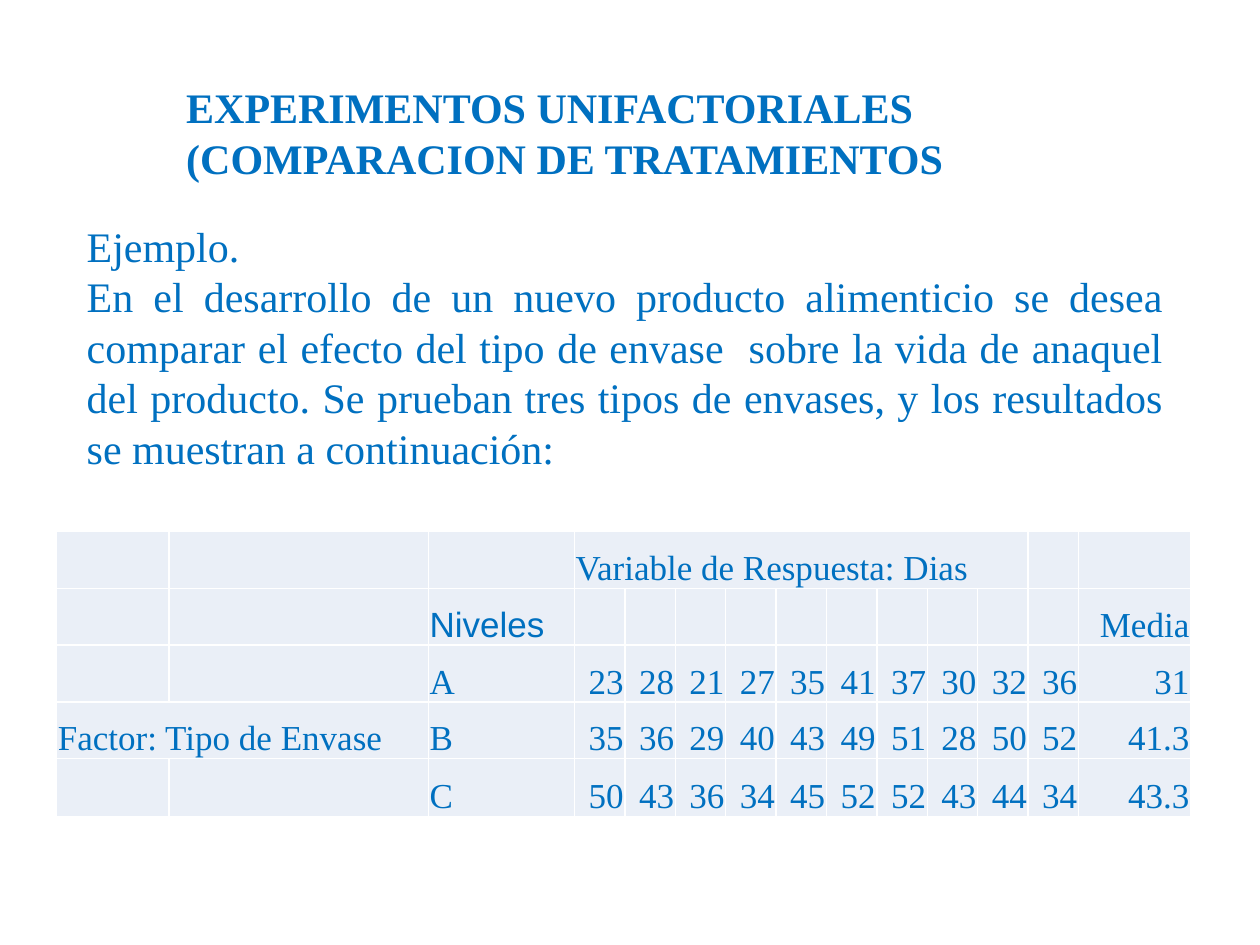
"""Build the slide on single-factor experiments with its table of results."""
from dataclasses import dataclass

from lxml import etree
from pptx import Presentation
from pptx.dml.color import RGBColor
from pptx.enum.text import MSO_ANCHOR, PP_ALIGN
from pptx.oxml.ns import qn
from pptx.util import Inches, Pt

LEFT, RIGHT, JUST = PP_ALIGN.LEFT, PP_ALIGN.RIGHT, PP_ALIGN.JUSTIFY
BOTTOM = MSO_ANCHOR.BOTTOM
HUES = {"text": "0070C0", "cell": "EAEFF7", "edge": "FFFFFF"}
SERIF, SANS = "Times New Roman", "Arial"
WIDTHS = [0.89, 2.06, 1.16] + [0.4] * 10 + [0.89]
HEIGHTS = [0.45] * 4 + [0.46]
DAYS = {
    "A": [23, 28, 21, 27, 35, 41, 37, 30, 32, 36],
    "B": [35, 36, 29, 40, 43, 49, 51, 28, 50, 52],
    "C": [50, 43, 36, 34, 45, 52, 52, 43, 44, 34],
}


@dataclass
class Block:
    """A text box with its place and paragraphs."""
    left: float
    top: float
    width: float
    height: float
    lines: list[str]
    align: PP_ALIGN = LEFT
    bold: bool = False


@dataclass
class Entry:
    """A filled table cell and the columns it spans."""
    row: int
    col: int
    text: str
    align: PP_ALIGN = LEFT
    font: str = SERIF
    span: int = 1


BLOCKS = [
    Block(1.38, 0.6, 7.8, 0.91,
          ["EXPERIMENTOS UNIFACTORIALES (COMPARACION DE TRATAMIENTOS"], bold=True),
    Block(0.59, 1.7, 8.74, 2.12, [
        "Ejemplo.",
        "En el desarrollo de un nuevo producto alimenticio se desea comparar "
        "el efecto del tipo de envase  sobre la vida de anaquel del producto. "
        "Se prueban tres tipos de envases, y los resultados se muestran a "
        "continuación:",
    ], JUST),
]
HEADS = [
    Entry(0, 3, "Variable de Respuesta: Dias", span=9),
    Entry(1, 2, "Niveles", font=SANS),
    Entry(1, 13, "Media", RIGHT),
    Entry(3, 0, "Factor: Tipo de Envase", span=2),
]


def add_run(para, text: str, size: int, font: str = SERIF, bold: bool = False) -> None:
    """Add one styled run to a paragraph."""
    run = para.add_run()
    run.text = text
    run.font.name, run.font.size, run.font.bold = font, Pt(size), bold
    run.font.color.rgb = RGBColor.from_string(HUES["text"])


def draw_block(slide, block: Block) -> None:
    """Draw a text box, one paragraph a line."""
    box = slide.shapes.add_textbox(Inches(block.left), Inches(block.top),
                                   Inches(block.width), Inches(block.height))
    frame = box.text_frame
    frame.word_wrap = True
    for num, line in enumerate(block.lines):
        para = frame.add_paragraph() if num else frame.paragraphs[0]
        para.alignment = block.align
        add_run(para, line, 24, bold=block.bold)


def style_cell(cell) -> None:
    """Give a cell its margins, borders and fill."""
    cell.margin_left = cell.margin_right = cell.margin_top = Inches(0.01)
    cell.margin_bottom = 0
    cell.vertical_anchor = BOTTOM
    props = cell._tc.get_or_add_tcPr()
    for side in ("lnL", "lnR", "lnT", "lnB"):
        edge = etree.SubElement(props, qn(f"a:{side}"), w=str(Pt(1)))
        fill = etree.SubElement(edge, qn("a:solidFill"))
        etree.SubElement(fill, qn("a:srgbClr"), val=HUES["edge"])
    cell.fill.solid()
    cell.fill.fore_color.rgb = RGBColor.from_string(HUES["cell"])


def list_days() -> list[Entry]:
    """List the level, days and mean of each row."""
    cells = []
    for row, (level, days) in enumerate(DAYS.items(), 2):
        cells.append(Entry(row, 2, level))
        mean = sum(days) / len(days)
        for col, value in enumerate([*days, mean], 3):
            cells.append(Entry(row, col, f"{value:g}", RIGHT))
    return cells


def draw_table(slide, cells: list[Entry]) -> None:
    """Draw the table and write its cells."""
    table = slide.shapes.add_table(
        len(HEIGHTS), len(WIDTHS), Inches(0.45), Inches(4.22),
        Inches(sum(WIDTHS)), Inches(sum(HEIGHTS))).table
    table.first_row = table.horz_banding = False
    for col, width in zip(table.columns, WIDTHS):
        col.width = Inches(width)
    for row, height in zip(table.rows, HEIGHTS):
        row.height = Inches(height)
    for cell in table.iter_cells():
        style_cell(cell)
    for item in cells:
        cell = table.cell(item.row, item.col)
        if item.span > 1:
            cell.merge(table.cell(item.row, item.col + item.span - 1))
        para = cell.text_frame.paragraphs[0]
        para.alignment = item.align
        add_run(para, item.text, 20, item.font)


def main() -> None:
    """Build and save the slide."""
    deck = Presentation()
    deck.slide_width, deck.slide_height = Inches(10), Inches(7.5)
    slide = deck.slides.add_slide(deck.slide_layouts[6])
    for block in BLOCKS:
        draw_block(slide, block)
    draw_table(slide, HEADS + list_days())
    deck.save("out.pptx")


if __name__ == "__main__":
    main()
